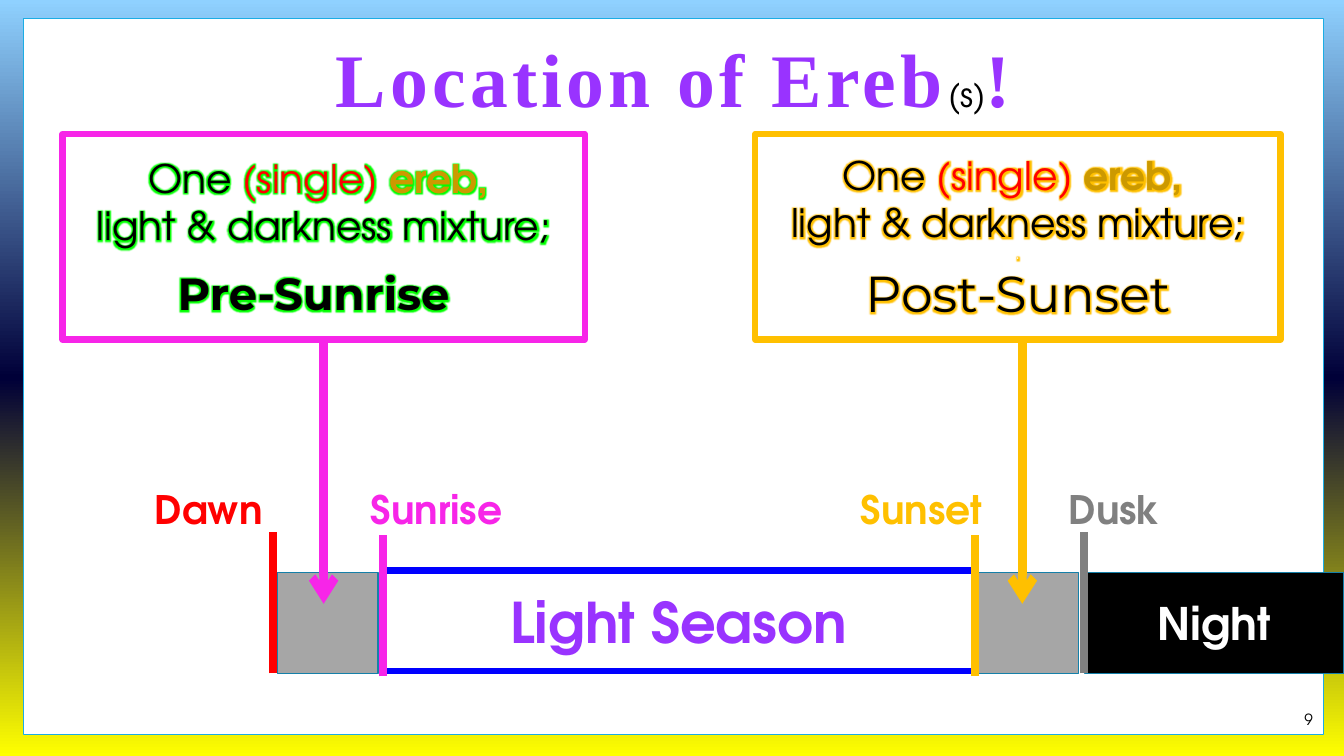
from copy import deepcopy
from lxml import etree
from pptx import Presentation
from pptx.dml.color import RGBColor as RGB
from pptx.enum.shapes import MSO_CONNECTOR as LINE, MSO_SHAPE as SHAPE
from pptx.enum.text import MSO_ANCHOR as ANCHOR, PP_ALIGN as ALIGN
from pptx.oxml.ns import qn
from pptx.util import Inches, Pt

# Colours
WHITE, BLACK = RGB(255, 255, 255), RGB(0, 0, 0)
SKY, NAVY, YELLOW = RGB(0x8F, 0xD1, 0xFF), RGB(0, 0, 0x38), RGB(255, 255, 0)
CYAN, TEAL = RGB(0x1C, 0xAD, 0xE4), RGB(0x15, 0x80, 0xA9)
PURPLE, PINK, GOLD = RGB(0x99, 0x33, 0xFF), RGB(0xF7, 0x25, 0xE8), RGB(255, 0xC0, 0)
RED, GREEN, BLUE = RGB(255, 0, 0), RGB(0, 255, 0), RGB(0, 0, 255)
OCHRE, GREY, SILVER = RGB(0xCC, 0x99, 0), RGB(0x80, 0x80, 0x80), RGB(0xA6, 0xA6, 0xA6)

# Content: a run is (text, size, colour, bold, font)
ROUND, SERIF, SANS = "TeX Gyre Adventor", "Times New Roman", "Montserrat"
TITLE = [[("Location of Ereb", 54, PURPLE, True, SERIF),
          ("(s)", 24, BLACK, False, ROUND),
          ("!", 54, PURPLE, True, SERIF)]]
MIXTURE = [[("One ", 28, BLACK, False, ROUND),
            ("(single) ", 28, RED, False, ROUND),
            ("ereb, ", 28, OCHRE, True, ROUND)],
           [("light & darkness mixture;", 28, BLACK, False, ROUND)]]
RISE = MIXTURE + [[("Pre-Sunrise", 32, BLACK, True, SANS)]]
SET = MIXTURE + [[(".", 10, WHITE, False, ROUND)],
                 [("Post-Sunset", 36, BLACK, False, SANS)]]
# Box: left, width, colour, glow, text, arrow x
NOTES = [(0.62, 5.18, PINK, GREEN, RISE, 3.21),
         (7.49, 5.21, GOLD, GOLD, SET, 10.14)]
# Mark: name, x, foot, label centre, colour
MARKS = [("Dawn", 2.71, 6.68, 2.07, RED),
         ("Sunrise", 3.8, 6.71, 4.33, PINK),
         ("Sunset", 9.67, 6.71, 9.14, GOLD),
         ("Dusk", 10.75, 6.68, 11.05, GREY)]
# Band: left, top, width, fill, line, line width, text
BANDS = [(3.8, 5.66, 5.86, None, BLUE, 4.5, [[("Light Season", 40, PURPLE, True, ROUND)]]),
         (2.75, 5.68, 1, SILVER, TEAL, 1, []),
         (9.7, 5.68, 1, SILVER, TEAL, 1, []),
         (10.76, 5.68, 2.57, BLACK, TEAL, 1, [[("Night", 32, WHITE, True, ROUND)]])]
NOTE_TOP, NOTE_HIGH, TICK, TIP = 1.33, 2.04, 1.4, 5.99

deck = Presentation()
deck.slide_width, deck.slide_height = Inches(13.33), Inches(7.5)
slide = deck.slides.add_slide(deck.slide_layouts[6])
shapes = slide.shapes


def add_glow(run, color):
    props = run.font._element
    effects = etree.Element(qn("a:effectLst"))
    glow = etree.SubElement(effects, qn("a:glow"), rad=str(Pt(5)))
    etree.SubElement(glow, qn("a:srgbClr"), val=str(color))
    props.find(qn("a:solidFill")).addnext(effects)


def write(shape, lines, align=ALIGN.CENTER, anchor=ANCHOR.MIDDLE, glow=None):
    frame = shape.text_frame
    frame.word_wrap, frame.vertical_anchor = True, anchor
    for i, line in enumerate(lines):
        para = frame.paragraphs[0] if i == 0 else frame.add_paragraph()
        para.alignment = align
        for text, size, color, bold, face in line:
            run = para.add_run()
            run.text = text
            font = run.font
            font.size, font.bold, font.name = Pt(size), bold, face
            font.color.rgb = color
            if glow:
                add_glow(run, glow)
    return frame


def add_box(x, y, w, h, fill, edge, width):
    box = shapes.add_shape(SHAPE.RECTANGLE, *map(Inches, (x, y, w, h)))
    box.shadow.inherit = False
    if fill is None:
        box.fill.background()
    else:
        box.fill.solid()
        box.fill.fore_color.rgb = fill
    box.line.color.rgb, box.line.width = edge, Pt(width)
    return box


def add_line(x, start, end, color, arrow=False):
    line = shapes.add_connector(LINE.STRAIGHT, *map(Inches, (x, start, x, end)))
    line.line.color.rgb, line.line.width = color, Pt(6)
    if arrow:
        etree.SubElement(line.line._get_or_add_ln(), qn("a:tailEnd"), type="arrow")
    etree.SubElement(line._element.spPr, qn("a:effectLst"))
    return line


def add_text(x, y, w, h, lines, **style):
    return write(shapes.add_textbox(*map(Inches, (x, y, w, h))), lines, **style)


# Background: sky, night, sun
back = slide.background.fill
back.gradient()
back.gradient_angle = 270
stops = slide.element.find(".//" + qn("a:gsLst"))
stops.append(deepcopy(stops[0]))
for stop, place, color in zip(back.gradient_stops, (0, 0.5, 1), (SKY, NAVY, YELLOW)):
    stop.position, stop.color.rgb = place, color

# Panel with title
panel = add_box(0.23, 0.18, 12.9, 7.11, WHITE, CYAN, 0.75)
frame = write(panel, TITLE, anchor=ANCHOR.TOP)
frame.margin_top = Inches(0.14)
frame.paragraphs[0].runs[0].font._element.set("spc", "300")

# Notes
notes = []
for x, w, color, glow, lines, _ in NOTES:
    box = add_box(x, NOTE_TOP, w, NOTE_HIGH, None, color, 4.5)
    notes.append((box, write(box, lines, glow=glow)))
last = notes[0][1].paragraphs[-1]
last.space_before = Pt(12)
last._p.get_or_add_pPr().set("marR", str(Inches(0.2)))

# Time bands
for x, y, w, fill, edge, width, lines in BANDS:
    write(add_box(x, y, w, 1, fill, edge, width), lines)

# Marks with labels
for name, x, foot, mid, color in MARKS:
    add_line(x, foot, foot - TICK, color)
    add_text(mid - 1, 4.75, 2, 0.6, [[(name, 28, color, True, ROUND)]])

# Arrows from notes to bands
arrows = [add_line(x, NOTE_TOP + NOTE_HIGH, TIP, color, True)
          for _, _, color, _, _, x in NOTES]
arrows[0].begin_connect(notes[0][0], 2)

# Page number
add_text(12.64, 6.98, 0.48, 0.3, [[("9", 11, BLACK, False, ROUND)]],
         align=ALIGN.RIGHT, anchor=ANCHOR.BOTTOM)

deck.save("out.pptx")
